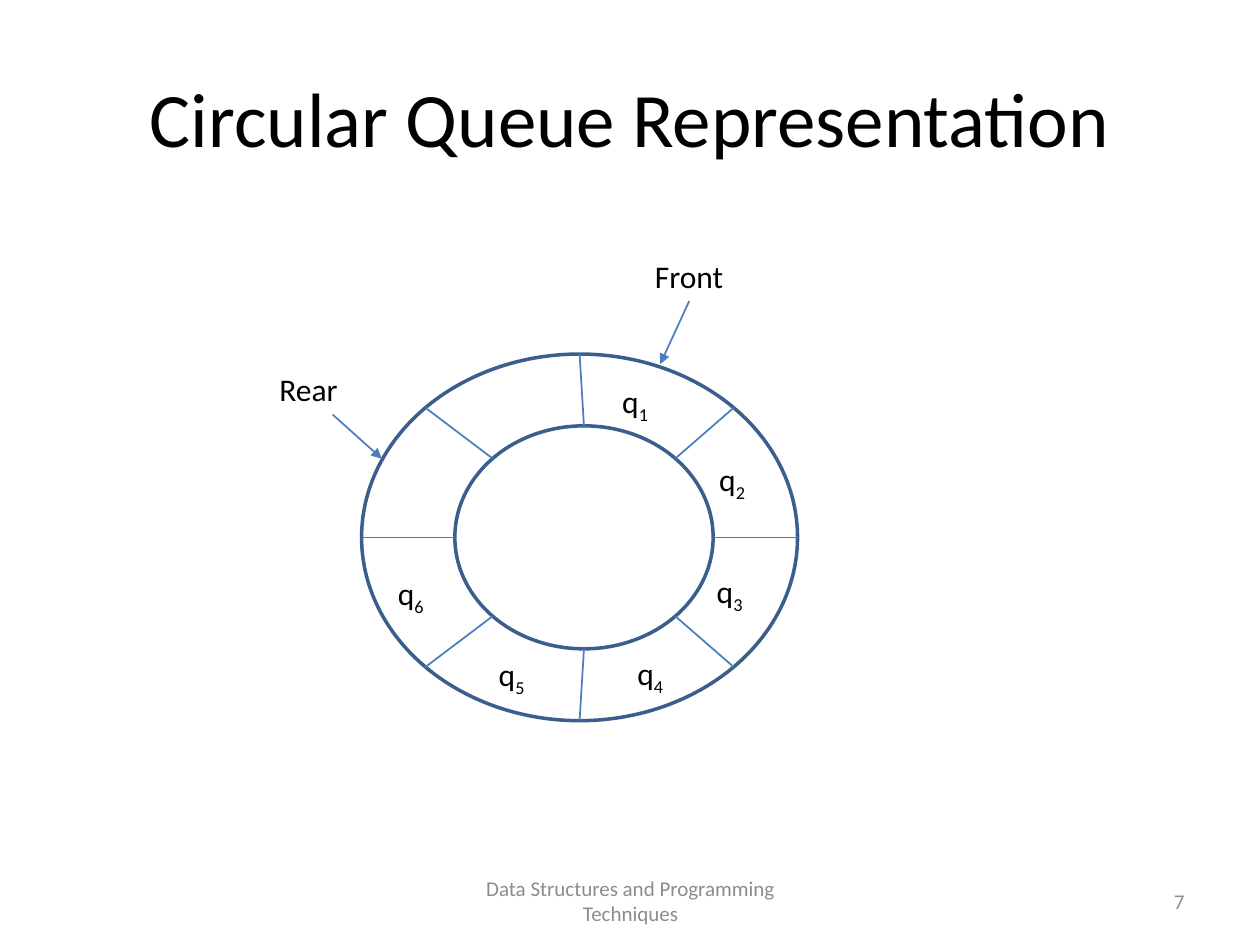
import math
from dataclasses import dataclass

import pptx
import pptx.dml.color
import pptx.enum.shapes
import pptx.enum.text
import pptx.oxml
import pptx.oxml.ns
import pptx.util

Inches = pptx.util.Inches
Align = pptx.enum.text.PP_ALIGN
Anchor = pptx.enum.text.MSO_ANCHOR

FONT = "Calibri"
BLACK, WHITE, GRAY = "000000", "FFFFFF", "8C8C8C"
RING_BLUE, LINE_BLUE = "3A5F8C", "4B7EBC"
SLOT_COUNT = 8


@dataclass
class Ring:
    left: float
    top: float
    width: float
    height: float

    def point(self, angle: float) -> tuple[float, float]:
        """Point on the rim, clockwise from the top."""
        return (self.left + self.width / 2 * (1 + math.sin(angle)),
                self.top + self.height / 2 * (1 - math.cos(angle)))


@dataclass
class Label:
    text: str
    left: float
    top: float
    width: float
    subscript: str = ""
    size: int = 18
    color: str = BLACK
    align: Align = Align.LEFT
    anchor: Anchor = Anchor.TOP


@dataclass
class Pointer:
    label: Label
    start: tuple[float, float]
    end: tuple[float, float]


def rgb(color: str) -> pptx.dml.color.RGBColor:
    return pptx.dml.color.RGBColor.from_string(color)


def style_paragraph(paragraph, size: int, color: str, align: Align) -> None:
    paragraph.alignment = align
    paragraph.font.name = FONT
    paragraph.font.size = pptx.util.Pt(size)
    paragraph.font.color.rgb = rgb(color)


def draw_ring(slide, ring: Ring) -> None:
    oval = slide.shapes.add_shape(
        pptx.enum.shapes.MSO_SHAPE.OVAL, Inches(ring.left), Inches(ring.top),
        Inches(ring.width), Inches(ring.height))
    oval.shadow.inherit = False
    oval.fill.solid()
    oval.fill.fore_color.rgb = rgb(WHITE)
    oval.line.color.rgb = rgb(RING_BLUE)
    oval.line.width = pptx.util.Pt(2)


def draw_line(slide, start: tuple[float, float], end: tuple[float, float],
              arrow: bool = False) -> None:
    line = slide.shapes.add_connector(
        pptx.enum.shapes.MSO_CONNECTOR.STRAIGHT,
        *(Inches(value) for value in (*start, *end)))
    line.line.color.rgb = rgb(LINE_BLUE)
    line.line.width = pptx.util.Pt(1)
    properties = line._element.spPr
    if arrow:
        head = pptx.oxml.parse_xml(
            f'<a:tailEnd {pptx.oxml.ns.nsdecls("a")} type="triangle"/>')
        line.line._get_or_add_ln().append(head)
    properties.append(pptx.oxml.parse_xml(
        f'<a:effectLst {pptx.oxml.ns.nsdecls("a")}/>'))


def draw_label(slide, label: Label) -> None:
    box = slide.shapes.add_textbox(Inches(label.left), Inches(label.top),
                                   Inches(label.width), Inches(0.4))
    frame = box.text_frame
    frame.word_wrap = True
    frame.vertical_anchor = label.anchor
    paragraph = frame.paragraphs[0]
    paragraph.add_run().text = label.text
    if label.subscript:
        index = paragraph.add_run()
        index.text = label.subscript
        index._r.get_or_add_rPr().set("baseline", "-25000")
    style_paragraph(paragraph, label.size, label.color, label.align)


OUTER = Ring(2.87, 2.81, 3.46, 2.91)
INNER = Ring(3.61, 3.38, 2.05, 1.77)
POINTERS = [
    Pointer(Label("Front", 5.1, 1.99, 1.47), (5.47, 2.39), (5.24, 2.89)),
    Pointer(Label("Rear", 2.12, 2.89, 1.47), (2.64, 3.29), (3.03, 3.64)),
]
# Top-left corners of the filled slots' labels, q1 onwards
ELEMENT_CORNERS = [(4.84, 2.98), (5.61, 3.6), (5.59, 4.49),
                   (4.96, 5.14), (3.86, 5.15), (3.06, 4.51)]
FOOTERS = [
    Label("Data Structures and Programming Techniques", 3.42, 6.95, 3.17,
          size=12, color=GRAY, align=Align.CENTER, anchor=Anchor.MIDDLE),
    Label("7", 7.17, 6.95, 2.33,
          size=12, color=GRAY, align=Align.RIGHT, anchor=Anchor.MIDDLE),
]


def main() -> None:
    deck = pptx.Presentation()
    deck.slide_width, deck.slide_height = Inches(10), Inches(7.5)
    slide = deck.slides.add_slide(deck.slide_layouts[5])

    # Title
    title = slide.shapes.title
    title.left, title.top = Inches(0.5), Inches(0.3)
    title.width, title.height = Inches(9), Inches(1.25)
    title.text_frame.text = "Circular Queue Representation"
    title.text_frame.vertical_anchor = Anchor.MIDDLE
    style_paragraph(title.text_frame.paragraphs[0], 44, BLACK, Align.CENTER)

    # Ring divided into equal slots
    for ring in (OUTER, INNER):
        draw_ring(slide, ring)
    for slot in range(SLOT_COUNT):
        angle = slot * math.tau / SLOT_COUNT
        draw_line(slide, INNER.point(angle), OUTER.point(angle))

    # Front and rear pointers
    for pointer in POINTERS:
        draw_label(slide, pointer.label)
        draw_line(slide, pointer.start, pointer.end, arrow=True)

    # Queue elements
    for number, (left, top) in enumerate(ELEMENT_CORNERS, start=1):
        draw_label(slide, Label("q", left, top, 0.56, subscript=str(number)))

    # Footer and slide number
    for footer in FOOTERS:
        draw_label(slide, footer)

    deck.save("out.pptx")


if __name__ == "__main__":
    main()
